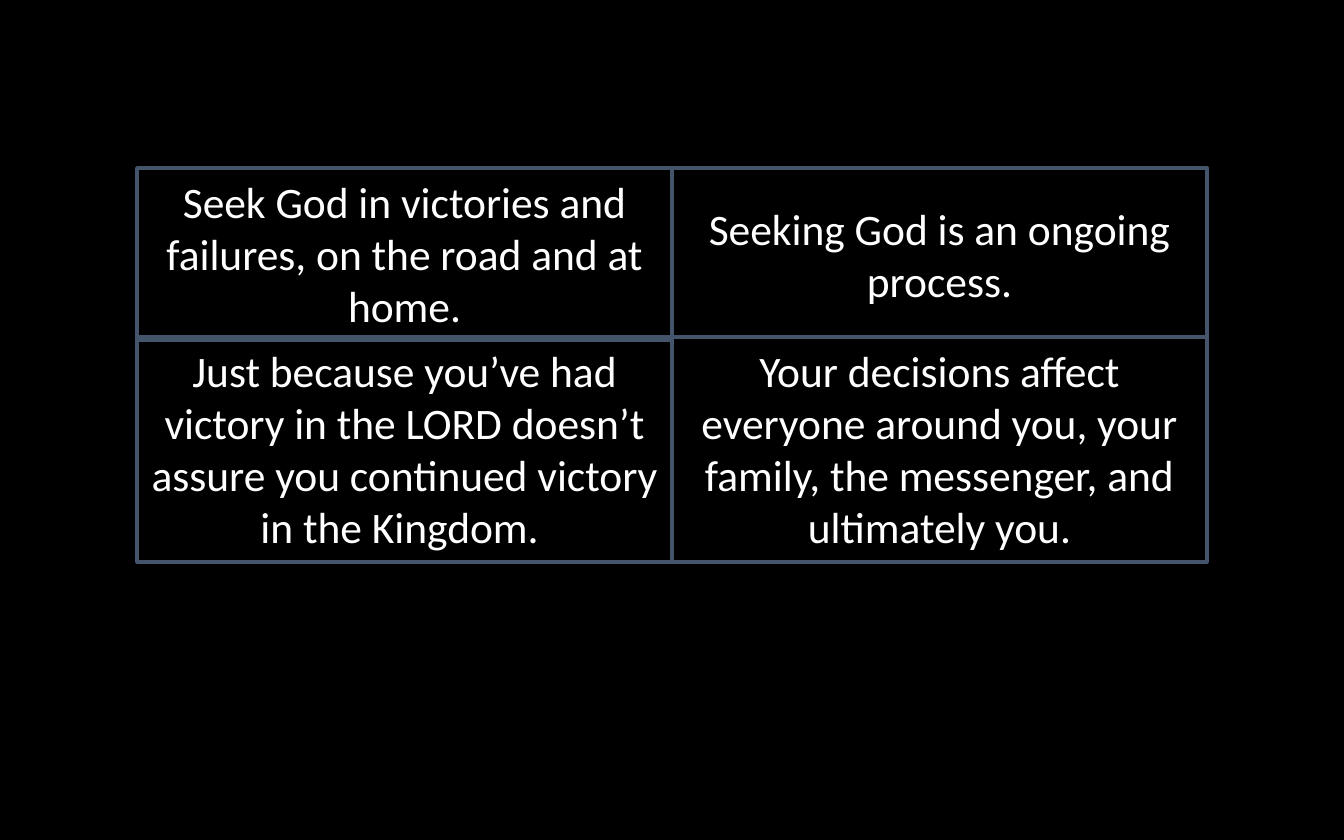
from pptx import Presentation
from pptx.dml.color import RGBColor
from pptx.enum.shapes import MSO_SHAPE as Shape
from pptx.enum.text import MSO_ANCHOR as Anchor, MSO_AUTO_SIZE as AutoSize, PP_ALIGN as Align
from pptx.util import Inches, Pt


def rgb(value):
    return RGBColor.from_string(value)


class Deck:
    """Holds the style and the current slide, and draws cells on a two-by-two grid."""

    FONT = {"name": "Calibri", "size": Pt(23.3)}
    TEXT, LINE, BACK = "FFFFFF", "44546A", "000000"
    LEFT, COLUMN = 1.02, 3.98
    TOP, ROWS = 1.25, (1.26, 1.67)

    def __init__(self, prs):
        self.s = prs.slides.add_slide(prs.slide_layouts[6])
        fill = self.s.background.fill
        fill.solid()
        fill.fore_color.rgb = rgb(self.BACK)

    def cell(self, row, col, text, inset=0.05, fit=True, overlap=0):
        x = self.LEFT + col * self.COLUMN
        y = self.TOP + sum(self.ROWS[:row])
        box = (x, y, self.COLUMN, self.ROWS[row] + overlap)
        sp = self.s.shapes.add_shape(Shape.RECTANGLE, *map(Inches, box))
        sp.shadow.inherit = False
        sp.fill.background()
        sp.line.color.rgb = rgb(self.LINE)
        sp.line.width = Pt(2)
        tf = sp.text_frame
        frame = {
            "word_wrap": True,
            "vertical_anchor": Anchor.TOP,
            "auto_size": AutoSize.SHAPE_TO_FIT_TEXT if fit else AutoSize.NONE,
            "margin_top": Inches(inset),
        }
        for name, value in frame.items():
            setattr(tf, name, value)
        p = tf.paragraphs[0]
        p.alignment = Align.CENTER
        r = p.add_run()
        r.text = text
        for name, value in self.FONT.items():
            setattr(r.font, name, value)
        r.font.color.rgb = rgb(self.TEXT)


def main():
    prs = Presentation()
    prs.slide_width, prs.slide_height = Inches(10), Inches(6.25)
    deck = Deck(prs)
    deck.cell(0, 0, "Seek God in victories and failures, on the road and at home.", overlap=0.02)
    deck.cell(1, 1, "Your decisions affect everyone around you, your family, the messenger, and ultimately you.")
    deck.cell(0, 1, "Seeking God is an ongoing process.", inset=0.25, fit=False)
    deck.cell(1, 0, "Just because you’ve had victory in the LORD doesn’t assure you continued victory in the Kingdom. ")
    prs.save("out.pptx")


if __name__ == "__main__":
    main()
